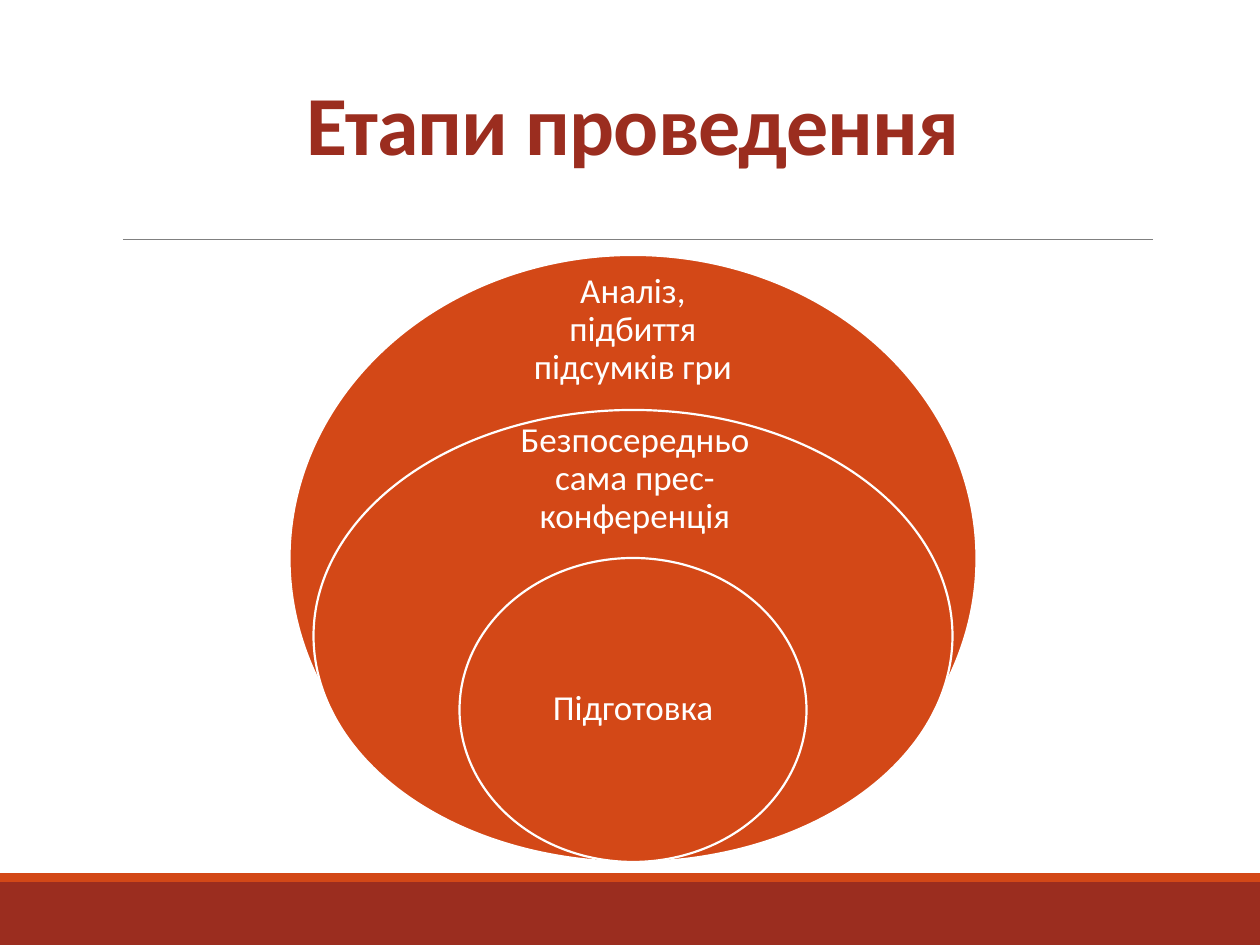
from pptx import Presentation
from pptx import util as u
from pptx.dml.color import RGBColor
from pptx.enum import shapes, text
from pptx.oxml.ns import qn
from lxml import etree

PX = 914400 / 126
FONT = "Calibri"
COLORS = {"dark": "9B2D1F", "orange": "D34817", "rule": "808080", "white": "FFFFFF"}

TITLE = "Етапи проведення"
TITLE_BOX = (113, 39, 1040, 140)
RULE = (123, 239, 1153, 239)
BARS = [("dark", (0, 882, 1260, 63)), ("orange", (0, 873, 1260, 9))]

# Nested ellipses share a centre line and a bottom edge.
CENTER_X, BOTTOM = 633, 862
# label, ellipse (width, height), label (centre x, top, width, height)
STAGES = [
    ("Аналіз, підбиття підсумків гри", (687, 607), (633, 285, 241, 91)),
    ("Безпосередньо сама прес-конференція", (639, 452), (635, 437, 297, 84)),
    ("Підготовка", (347, 304), (633, 634, 244, 151)),
]
LABEL_INSET = 20


def emu(*lengths):
    return [u.Emu(round(n * PX)) for n in lengths]


def rgb(name):
    return RGBColor.from_string(COLORS[name])


def add_filled(s, kind, box, color):
    sp = s.shapes.add_shape(kind, *emu(*box))
    sp.shadow.inherit = False
    sp.fill.solid()
    sp.fill.fore_color.rgb = rgb(color)
    sp.line.fill.background()
    return sp


def set_text(sp, words, size, color, spacing, anchor):
    tf = sp.text_frame
    tf.word_wrap = True
    tf.auto_size = text.MSO_AUTO_SIZE.NONE
    tf.vertical_anchor = anchor
    tf.text = words
    p = tf.paragraphs[0]
    p.alignment = text.PP_ALIGN.CENTER
    p.line_spacing = spacing
    r = p.runs[0]
    r.font.name = FONT
    r.font.size = u.Pt(size)
    r.font.color.rgb = rgb(color)
    return r


def add_title(s):
    sp = s.shapes.title
    sp.left, sp.top, sp.width, sp.height = emu(*TITLE_BOX)
    r = set_text(sp, TITLE, 48, "dark", 0.85, text.MSO_ANCHOR.BOTTOM)
    r.font.bold = True
    r.font._element.set("spc", "-50")


def add_rule(s):
    line = s.shapes.add_connector(shapes.MSO_CONNECTOR.STRAIGHT, *emu(*RULE))
    line.line.color.rgb = rgb("rule")
    line.line.width = u.Pt(0.5)
    etree.SubElement(line._element.spPr, qn("a:effectLst"))


def add_stage(s, label, size, label_box):
    w, h = size
    box = (CENTER_X - w / 2, BOTTOM - h, w, h)
    ellipse = add_filled(s, shapes.MSO_SHAPE.OVAL, box, "orange")
    ellipse.line.color.rgb = rgb("white")
    ellipse.line.width = u.Pt(1.25)

    cx, top, w, h = label_box
    sp = s.shapes.add_textbox(*emu(cx - w / 2, top, w, h))
    set_text(sp, label, 20, "white", 0.9, text.MSO_ANCHOR.MIDDLE)
    tf = sp.text_frame
    inset, = emu(LABEL_INSET)
    tf.margin_left = tf.margin_right = tf.margin_top = tf.margin_bottom = inset


def main():
    prs = Presentation()
    prs.slide_width, prs.slide_height = emu(1260, 945)
    s = prs.slides.add_slide(prs.slide_layouts[5])
    for color, box in BARS:
        add_filled(s, shapes.MSO_SHAPE.RECTANGLE, box, color)
    add_rule(s)
    add_title(s)
    for stage in STAGES:
        add_stage(s, *stage)
    prs.save("out.pptx")


if __name__ == "__main__":
    main()
